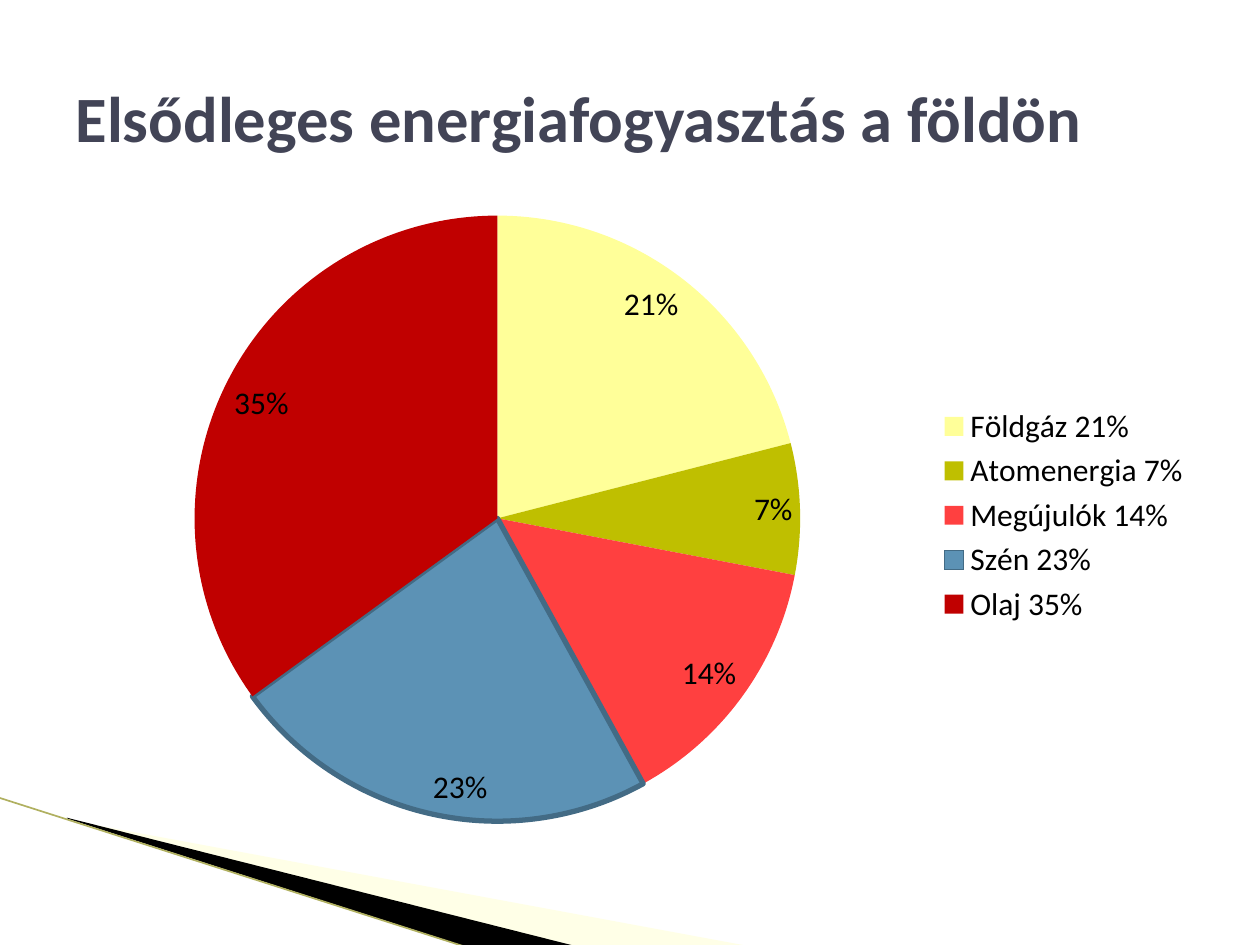
from lxml import etree
from pptx import Presentation
from pptx.chart.data import CategoryChartData
from pptx.dml.color import RGBColor
from pptx.enum.chart import XL_CHART_TYPE as ChartType
from pptx.enum.chart import XL_LABEL_POSITION as LabelPosition
from pptx.enum.chart import XL_LEGEND_POSITION as LegendPosition
from pptx.enum.shapes import MSO_CONNECTOR as Connector
from pptx.enum.text import MSO_ANCHOR as Anchor
from pptx.enum.text import PP_ALIGN as Align
from pptx.oxml import parse_xml
from pptx.oxml.ns import nsdecls, qn
from pptx.util import Pt

BLACK = RGBColor(0x00, 0x00, 0x00)
TITLE_GREY = RGBColor(0x42, 0x44, 0x56)
PALE_YELLOW = RGBColor(0xFF, 0xFF, 0xC5)
OLIVE = RGBColor(0xB0, 0xB0, 0x60)
SLICE_EDGE = RGBColor(0x43, 0x6B, 0x85)
COAL_BLUE = RGBColor(0x5C, 0x92, 0xB5)

# Name, share in percent, slice colour
ENERGY = [
    ("Földgáz", 21, RGBColor(0xFF, 0xFF, 0x99)),
    ("Atomenergia", 7, RGBColor(0xBF, 0xBF, 0x00)),
    ("Megújulók", 14, RGBColor(0xFF, 0x40, 0x40)),
    ("Szén", 23, COAL_BLUE),
    ("Olaj", 35, RGBColor(0xC0, 0x00, 0x00)),
]


class SlideBuilder:
    title_format = {"name": "Calibri", "size": Pt(36.9), "bold": True}
    chart_format = {"name": "Calibri", "size": Pt(18), "bold": False}

    def __init__(self, slide):
        self.slide = slide

    def style(self, font, values, color):
        for name, value in values.items():
            setattr(font, name, value)
        font.color.rgb = color

    def title(self, text, left, top, width, height):
        shape = self.slide.shapes.title
        shape.left, shape.top = Pt(left), Pt(top)
        shape.width, shape.height = Pt(width), Pt(height)
        frame = shape.text_frame
        frame.text = text
        frame.vertical_anchor = Anchor.MIDDLE
        paragraph = frame.paragraphs[0]
        paragraph.alignment = Align.LEFT
        self.style(paragraph.runs[0].font, self.title_format, TITLE_GREY)

    def wedge(self, points, color, opacity=100):
        corners = [(Pt(x), Pt(y)) for x, y in points]
        builder = self.slide.shapes.build_freeform(*corners[0])
        builder.add_line_segments(corners[1:], close=True)
        shape = builder.convert_to_shape()
        shape.shadow.inherit = False
        shape.fill.solid()
        shape.fill.fore_color.rgb = color
        shape.line.fill.background()
        if opacity < 100:
            color_element = next(shape.element.spPr.iter(qn("a:srgbClr")))
            alpha = etree.SubElement(color_element, qn("a:alpha"))
            alpha.set("val", str(opacity * 1000))

    def line(self, start, end, color, width):
        ends = [Pt(value) for value in (*start, *end)]
        connector = self.slide.shapes.add_connector(Connector.STRAIGHT, *ends)
        connector.line.color.rgb = color
        connector.line.width = Pt(width)
        etree.SubElement(connector.element.spPr, qn("a:effectLst"))

    def pie(self, rows, left, top, width, height, plot_area):
        data = CategoryChartData()
        data.categories = [f"{name} {share}%" for name, share, _ in rows]
        data.add_series("Series 1", [share for _, share, _ in rows])
        box = [Pt(value) for value in (left, top, width, height)]
        chart = self.slide.shapes.add_chart(ChartType.PIE, *box, data).chart
        self.style(chart.font, self.chart_format, BLACK)
        chart.has_title = False
        chart.has_legend = True
        chart.legend.position = LegendPosition.RIGHT
        chart.legend.include_in_layout = False

        # Slices, with an edge on coal
        plot = chart.plots[0]
        plot.vary_by_categories = True
        for index, (_, _, color) in enumerate(rows):
            slice_format = plot.series[0].points[index].format
            slice_format.fill.solid()
            slice_format.fill.fore_color.rgb = color
            if color == COAL_BLUE:
                slice_format.line.color.rgb = SLICE_EDGE
                slice_format.line.width = Pt(3)
            else:
                slice_format.line.fill.background()

        # Percent labels
        plot.has_data_labels = True
        labels = plot.data_labels
        labels.show_percentage = True
        labels.show_value = False
        labels.number_format = "0%"
        labels.number_format_is_linked = False
        labels.position = LabelPosition.INSIDE_END
        self.style(labels.font, self.chart_format, BLACK)

        # Fixed place for the pie, as fractions of the chart
        sizes = "".join(f'<c:{key} val="{value}"/>' for key, value in plot_area.items())
        layout = parse_xml(
            f'<c:layout {nsdecls("c")}><c:manualLayout><c:layoutTarget val="inner"/>'
            f'<c:xMode val="edge"/><c:yMode val="edge"/>{sizes}'
            "</c:manualLayout></c:layout>"
        )
        area = next(chart.element.iter(qn("c:plotArea")))
        for old in area.findall(qn("c:layout")):
            area.remove(old)
        area.insert(0, layout)


def main():
    presentation = Presentation()
    presentation.slide_width, presentation.slide_height = Pt(720), Pt(540)
    slide = presentation.slides.add_slide(presentation.slide_layouts[5])
    builder = SlideBuilder(slide)

    # Corner decoration
    builder.wedge([(39.6, 468.7), (428.4, 540.7), (328.3, 540.7), (39.6, 468)],
                  PALE_YELLOW, opacity=40)
    builder.wedge([(38.2, 467.3), (329, 540.7), (267.8, 541.4), (38.9, 468)], BLACK)
    builder.line((-0.7, 455.8), (267.1, 541.4), OLIVE, 0.95)

    # Chart and title
    builder.pie(ENERGY, 31.7, 112.3, 656, 364.3,
                {"x": 0.12, "y": 0.03, "w": 0.53, "h": 0.95})
    builder.title("Elsődleges energiafogyasztás a földön", 36, 21.6, 648, 90)

    presentation.save("out.pptx")


if __name__ == "__main__":
    main()
